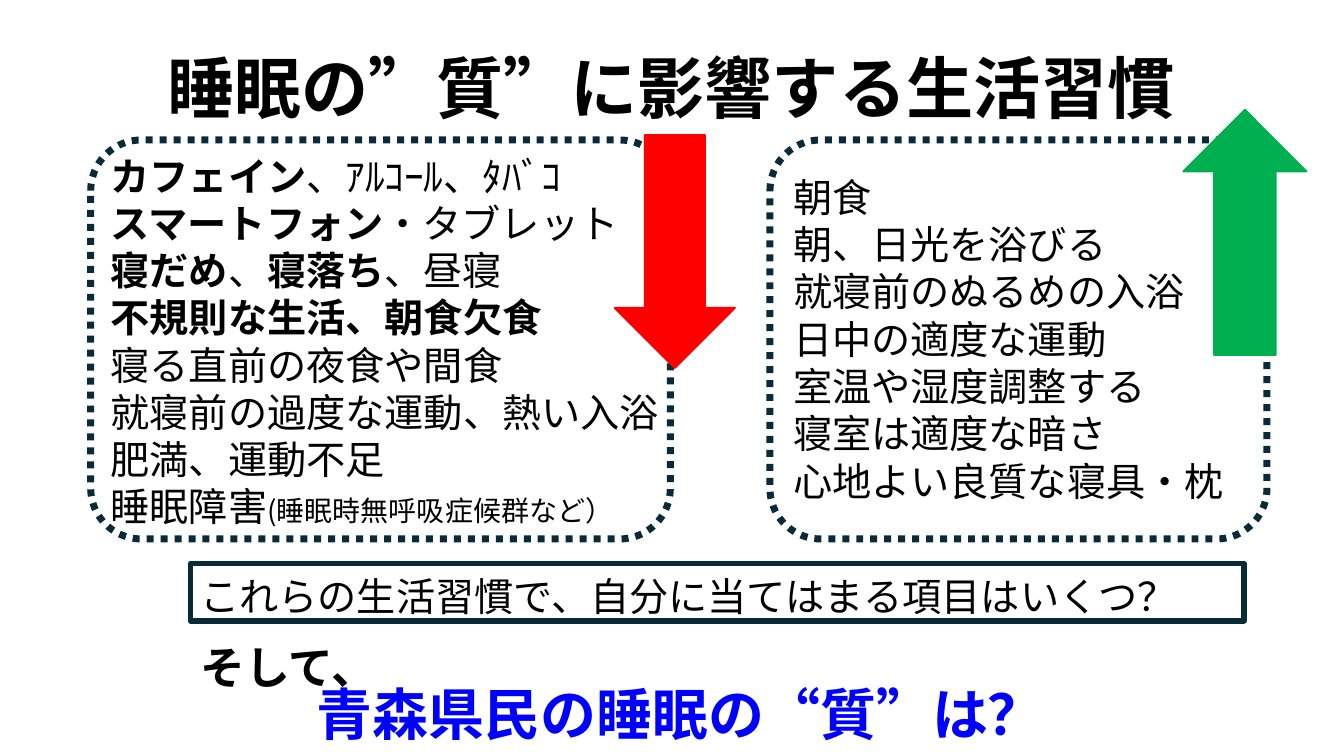
from pptx import Presentation
from pptx.dml.color import RGBColor
from pptx.enum.dml import MSO_LINE_DASH_STYLE as Dash
from pptx.enum.shapes import MSO_SHAPE as Kind
from pptx.enum.text import MSO_ANCHOR as Anchor, PP_ALIGN as Align
from pptx.oxml.ns import qn
from pptx.util import Pt

FONT = "Noto Sans CJK JP"
BLACK = RGBColor(0, 0, 0)
BLUE = RGBColor(0, 0, 0xFF)
NAVY = RGBColor(0x09, 0x2A, 0x39)
RED = RGBColor(0xFF, 0, 0)
GREEN = RGBColor(0, 0xB0, 0x50)

TITLE = "睡眠の”質”に影響する生活習慣"
QUERY = "これらの生活習慣で、自分に当てはまる項目はいくつ？"
LINK = "そして、"
CLOSE = "青森県民の睡眠の“質”は？"

# A line is a list of runs: text, bold, and a size where it differs
BAD = [
    [("カフェイン", True), ("、ｱﾙｺｰﾙ、ﾀﾊﾞｺ", False)],
    [("スマートフォン", True), ("・タブレット", False)],
    [("寝だめ", True), ("、", False), ("寝落ち", True), ("、昼寝", False)],
    [("不規則な生活、朝食欠食", True)],
    [("寝る直前の夜食や間食", False)],
    [("就寝前の過度な運動、熱い入浴", False)],
    [("肥満、運動不足", False)],
    [("睡眠障害", False), ("(睡眠時無呼吸症候群など）", False, 20)],
]
GOOD = [
    "朝食",
    "朝、日光を浴びる",
    "就寝前のぬるめの入浴",
    "日中の適度な運動",
    "室温や湿度調整する",
    "寝室は適度な暗さ",
    "心地よい良質な寝具・枕",
]

# Left, top, width, height
FRAMES = [(64.8, 100, 414, 285), (550, 100, 355, 285)]
ARROWS = [(439.2, 96.5, 85.7, 166.3, RED, 0), (845.3, 78.5, 87.8, 175, GREEN, 180)]

deck = Presentation()
deck.slide_width, deck.slide_height = Pt(960), Pt(540)
slide = deck.slides.add_slide(deck.slide_layouts[6])


def add_text(lines, *box, size=28, bold=False, color=BLACK, align=Align.LEFT,
             pitch=None, gap=0, inset=3.6):
    """Add a text box; each line is a string or a list of runs."""
    shape = slide.shapes.add_textbox(*map(Pt, box))
    frame = shape.text_frame
    frame.word_wrap = True
    frame.vertical_anchor = Anchor.TOP
    frame.margin_top = Pt(inset)
    for i, line in enumerate(lines):
        para = frame.paragraphs[0] if i == 0 else frame.add_paragraph()
        para.alignment = align
        para.line_spacing = Pt(pitch or round(size * 1.207, 1))
        para.space_before = Pt(gap if i else 0)
        runs = [(line, bold)] if isinstance(line, str) else line
        for words, heavy, *small in runs:
            run = para.add_run()
            run.text = words
            font = run.font
            font.name, font.bold = FONT, heavy
            font.size = Pt(small[0] if small else size)
            font.color.rgb = color
            east = font._element.makeelement(qn("a:ea"), {"typeface": FONT})
            font._element.find(qn("a:latin")).addnext(east)
    return shape


def add_frame(*box):
    shape = slide.shapes.add_shape(Kind.ROUNDED_RECTANGLE, *map(Pt, box))
    shape.adjustments[0] = 0.127
    shape.shadow.inherit = False
    shape.fill.background()
    shape.line.color.rgb = NAVY
    shape.line.width = Pt(5)
    shape.line.dash_style = Dash.ROUND_DOT


def add_arrow(*box, color, turn):
    shape = slide.shapes.add_shape(Kind.DOWN_ARROW, *map(Pt, box))
    shape.rotation = turn
    shape.shadow.inherit = False
    shape.fill.solid()
    shape.fill.fore_color.rgb = color
    shape.line.color.rgb = color
    shape.line.width = Pt(1.5)


add_text([CLOSE], 72, 460.8, 828, 40.3, size=40, bold=True, color=BLUE,
         align=Align.CENTER, inset=24.3)
add_text(BAD, 72, 112.3, 414, 301, pitch=28.4, gap=5.3, inset=1.6)
add_text(GOOD, 559.4, 118, 345.6, 266.4, inset=5.4)
query = add_text([QUERY], 136, 402.5, 752.4, 41, inset=6)
query.line.color.rgb = NAVY
query.line.width = Pt(4)
add_text([TITLE], 65.5, 24.5, 828, 65.5, size=48, bold=True,
         align=Align.CENTER, inset=8)
for box in FRAMES:
    add_frame(*box)
for *box, color, turn in ARROWS:
    add_arrow(*box, color=color, turn=turn)
add_text([LINK], 136, 450.7, 146, 46, size=32, bold=True, inset=5.7)

deck.save("out.pptx")
